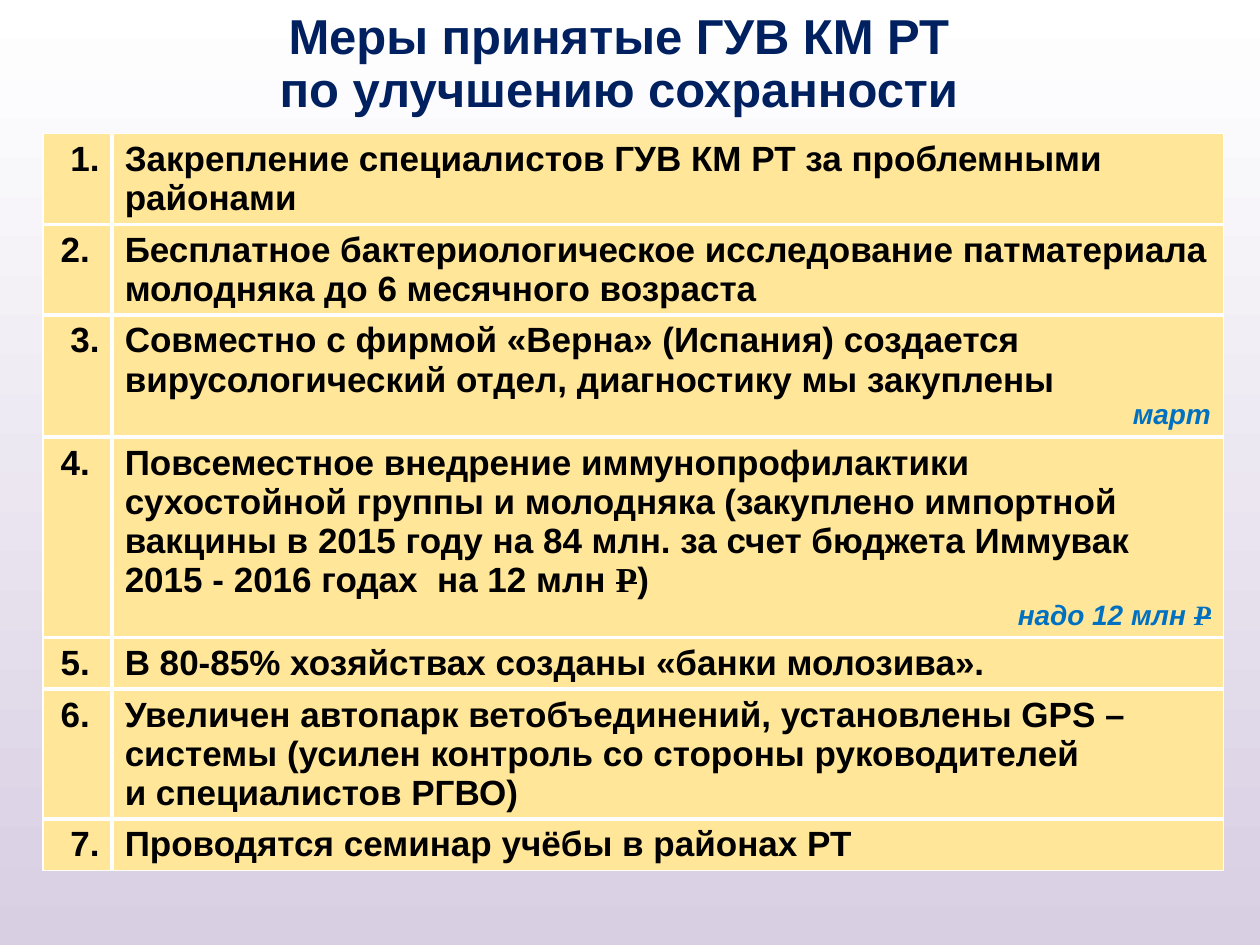
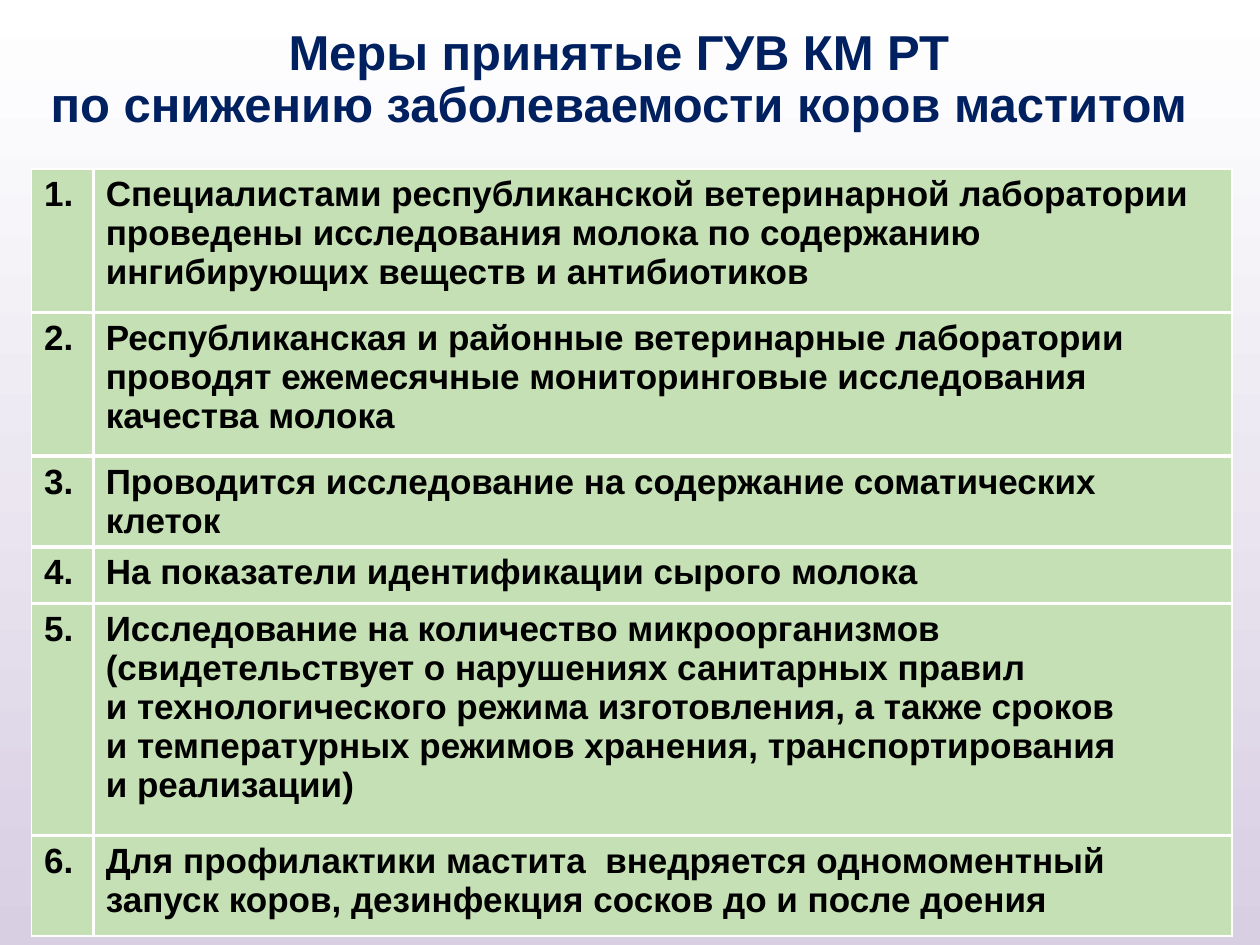
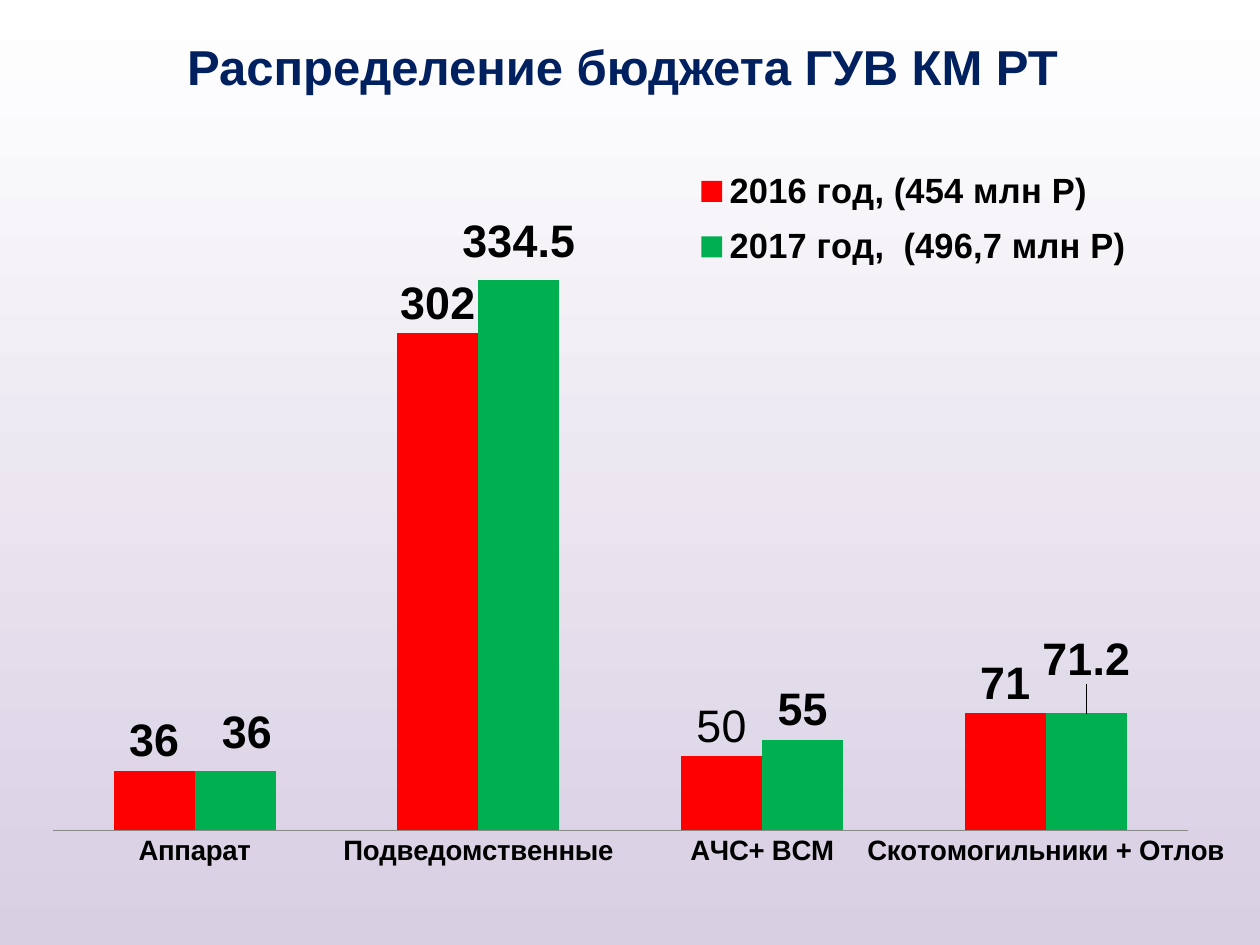
from lxml.etree import SubElement
from pptx import Presentation
from pptx.chart.data import CategoryChartData
from pptx.dml.color import RGBColor
from pptx.enum.chart import XL_CHART_TYPE as ChartType
from pptx.enum.chart import XL_LABEL_POSITION as LabelPosition
from pptx.enum.chart import XL_LEGEND_POSITION as LegendPosition
from pptx.enum.chart import XL_TICK_LABEL_POSITION as TickLabels
from pptx.enum.chart import XL_TICK_MARK as TickMark
from pptx.enum.shapes import MSO_SHAPE as Shape
from pptx.enum.text import MSO_ANCHOR as Anchor
from pptx.enum.text import MSO_AUTO_SIZE as AutoSize
from pptx.enum.text import PP_ALIGN as Align
from pptx.oxml import parse_xml
from pptx.oxml.ns import nsdecls, qn
from pptx.util import Inches, Pt

NAVY = RGBColor(0x00, 0x20, 0x60)
BLACK = RGBColor(0x00, 0x00, 0x00)
WHITE = RGBColor(0xFF, 0xFF, 0xFF)
LILAC = RGBColor(0xD8, 0xCF, 0xE3)
SAND = RGBColor(0xFF, 0xE6, 0x99)
SAGE = RGBColor(0xC5, 0xE0, 0xB4)
NOTE_BLUE = RGBColor(0x00, 0x70, 0xC0)
RED = RGBColor(0xFF, 0x00, 0x00)
GREEN = RGBColor(0x00, 0xB0, 0x50)
AXIS_GRAY = RGBColor(0x89, 0x89, 0x89)

FONT = "Arial"
ROUBLE = "Р"
ROUBLE_FONT = "Times New Roman"

SAFETY_ROWS = [
    ("1.", "Закрепление специалистов ГУВ КМ РТ за проблемными районами", "", 0.72),
    ("2. ", "Бесплатное бактериологическое исследование патматериала "
            "молодняка до 6 месячного возраста", "", 0.72),
    ("3.", "Совместно с фирмой «Верна» (Испания) создается "
           "вирусологический отдел, диагностику мы закуплены", "март", 0.97),
    ("4. ", "Повсеместное внедрение иммунопрофилактики \n"
            "сухостойной группы и молодняка (закуплено импортной "
            "вакцины в 2015 году на 84 млн. за счет бюджета Иммувак \n"
            "2015 - 2016 годах  на 12 млн {rouble})", "надо 12 млн {rouble}", 1.59),
    ("5. ", "В 80-85% хозяйствах созданы «банки молозива».", "", 0.41),
    ("6. ", "Увеличен автопарк ветобъединений, установлены GPS – "
            "системы (усилен контроль со стороны руководителей \n"
            "и специалистов РГВО)", "", 1.03),
    ("7.", "Проводятся семинар учёбы в районах РТ", "", 0.41),
]
MASTITIS_ROWS = [
    ("1.", "Специалистами республиканской ветеринарной лаборатории "
           "проведены исследования молока по содержанию "
           "ингибирующих веществ и антибиотиков", "", 1.14),
    ("2.", "Республиканская и районные ветеринарные лаборатории "
           "проводят ежемесячные мониторинговые исследования "
           "качества молока", "", 1.14),
    ("3.", "Проводится исследование на содержание соматических клеток", "", 0.72),
    ("4.", "На показатели идентификации сырого молока", "", 0.45),
    ("5.", "Исследование на количество микроорганизмов "
           "(свидетельствует о нарушениях санитарных правил \n"
           "и технологического режима изготовления, а также сроков \n"
           "и температурных режимов хранения, транспортирования \n"
           "и реализации)", "", 1.84),
    ("6.", "Для профилактики мастита  внедряется одномоментный "
           "запуск коров, дезинфекция сосков до и после доения", "", 0.8),
]
BUDGET_CATEGORIES = ["Аппарат", "Подведомственные", "АЧС+ ВСМ", "Скотомогильники + Отлов"]
BUDGET_SERIES = [
    ("2016 год, (454 млн Р)", [36, 302, 45, 71], RED),
    ("2017 год,  (496,7 млн Р)", [36, 334.5, 55, 71.2], GREEN),
]
LABEL_SHIFTS_2017 = [(0.01, -0.01), (0, -0.01), (0, 0), (0, -0.03)]


def style_font(font, size, color=BLACK, bold=True, italic=False, name=FONT):
    font.name = name
    font.size = Pt(size)
    font.bold = bold
    font.italic = italic
    font.color.rgb = color


def chart_layout(x, y, width=None, height=None, inner=False):
    layout = parse_xml(f"<c:layout {nsdecls('c')}><c:manualLayout/></c:layout>")
    settings = [("layoutTarget", "inner")] if inner else []
    if width is not None:
        settings += [("xMode", "edge"), ("yMode", "edge")]
    settings += [("x", x), ("y", y)]
    if width is not None:
        settings += [("w", width), ("h", height)]
    for tag, value in settings:
        SubElement(layout[0], qn(f"c:{tag}")).set("val", str(value))
    return layout


def replace_layout(parent, layout, position):
    for old_layout in parent.findall(qn("c:layout")):
        parent.remove(old_layout)
    parent.insert(position, layout)


class Deck:
    def __init__(self):
        self.presentation = Presentation()
        self.presentation.slide_width = Inches(10)
        self.presentation.slide_height = Inches(7.5)
        self.slide = None

    def add_slide(self, title, left, top, width, height):
        layout = self.presentation.slide_layouts[5]
        self.slide = self.presentation.slides.add_slide(layout)
        self.add_backdrop()
        self.add_title(title, left, top, width, height)

    def add_backdrop(self):
        backdrop = self.slide.shapes.add_shape(
            Shape.RECTANGLE, 0, 0,
            self.presentation.slide_width, self.presentation.slide_height)
        backdrop.shadow.inherit = False
        backdrop.line.fill.background()
        backdrop.fill.gradient()
        backdrop.fill.gradient_angle = 90
        for stop, color in zip(backdrop.fill.gradient_stops, (LILAC, WHITE)):
            stop.color.rgb = color
        self.slide.shapes.title.element.addprevious(backdrop.element)

    def add_title(self, text, left, top, width, height):
        title = self.slide.shapes.title
        title.left, title.top = Inches(left), Inches(top)
        title.width, title.height = Inches(width), Inches(height)
        frame = title.text_frame
        frame.auto_size = AutoSize.NONE
        frame.vertical_anchor = Anchor.MIDDLE
        paragraph = frame.paragraphs[0]
        paragraph.alignment = Align.CENTER
        paragraph.line_spacing = 0.9
        self.add_text(paragraph, text, 28, NAVY)

    def add_text(self, paragraph, text, size, color=BLACK, italic=False):
        for line_index, line in enumerate(text.split("\n")):
            if line_index:
                paragraph.add_line_break()
            for part_index, part in enumerate(line.split("{rouble}")):
                if part_index:
                    sign = paragraph.add_run()
                    sign.text = ROUBLE
                    style_font(sign.font, size, color, italic=italic, name=ROUBLE_FONT)
                    sign.font._element.set("strike", "sngStrike")
                if part:
                    run = paragraph.add_run()
                    run.text = part
                    style_font(run.font, size, color, italic=italic)

    def add_measures(self, rows, left, top, widths, fill, number_alignment):
        heights = [row[3] for row in rows]
        table = self.slide.shapes.add_table(
            len(rows), 2, Inches(left), Inches(top),
            Inches(sum(widths)), Inches(sum(heights))).table
        table.first_row = False
        table.horz_banding = False
        for column, width in zip(table.columns, widths):
            column.width = Inches(width)
        for index, (number, text, note, height) in enumerate(rows):
            table.rows[index].height = Inches(height)
            number_cell, text_cell = table.rows[index].cells
            sides = ["T"] * (index > 0) + ["B"] * (index < len(rows) - 1)
            self.format_cell(number_cell, fill, ["R"] + sides)
            self.format_cell(text_cell, fill, ["L"] + sides)
            paragraph = number_cell.text_frame.paragraphs[0]
            paragraph.alignment = number_alignment
            self.add_text(paragraph, number, 20)
            self.add_text(text_cell.text_frame.paragraphs[0], text, 20)
            if note:
                paragraph = text_cell.text_frame.add_paragraph()
                paragraph.alignment = Align.RIGHT
                self.add_text(paragraph, note, 16, NOTE_BLUE, italic=True)

    def format_cell(self, cell, fill, sides):
        properties = cell._tc.get_or_add_tcPr()
        for side in sides:
            properties.append(parse_xml(
                f'<a:ln{side} {nsdecls("a")} w="{Pt(2.25)}"><a:solidFill>'
                f'<a:srgbClr val="{WHITE}"/></a:solidFill></a:ln{side}>'))
        cell.fill.solid()
        cell.fill.fore_color.rgb = fill

    def add_budget_chart(self, left, top, width, height):
        data = CategoryChartData()
        data.categories = BUDGET_CATEGORIES
        for name, values, color in BUDGET_SERIES:
            data.add_series(name, values)
        chart = self.slide.shapes.add_chart(
            ChartType.COLUMN_CLUSTERED, Inches(left), Inches(top),
            Inches(width), Inches(height), data).chart
        style_font(chart.font, 10, bold=False, name="Calibri")
        chart.has_title = False
        self.format_axes(chart)
        self.format_legend(chart)
        plot = chart.plots[0]
        plot.gap_width = 150
        plot.overlap = 0
        plot.vary_by_categories = False
        for series, (name, values, color) in zip(plot.series, BUDGET_SERIES):
            series.format.fill.solid()
            series.format.fill.fore_color.rgb = color
            labels = series.data_labels
            labels.show_value = True
            labels.position = LabelPosition.OUTSIDE_END
            style_font(labels.font, 26)
        series_2016, series_2017 = plot.series
        label = series_2016.points[2].data_label
        label.position = LabelPosition.OUTSIDE_END
        run = label.text_frame.paragraphs[0].add_run()
        run.text = "50"
        style_font(run.font, 26, bold=False)
        for index, shift in enumerate(LABEL_SHIFTS_2017):
            label = series_2017.points[index].data_label
            style_font(label.font, 26)
            label.position = LabelPosition.OUTSIDE_END
            element = series_2017.data_labels._element.findall(qn("c:dLbl"))[index]
            replace_layout(element, chart_layout(*shift), 1)

    def format_axes(self, chart):
        value_axis = chart.value_axis
        value_axis.minimum_scale = 0
        value_axis.maximum_scale = 400
        value_axis.has_major_gridlines = False
        value_axis.visible = False
        category_axis = chart.category_axis
        category_axis.major_tick_mark = TickMark.NONE
        category_axis.tick_label_position = TickLabels.NEXT_TO_AXIS
        category_axis.format.line.color.rgb = AXIS_GRAY
        style_font(category_axis.tick_labels.font, 16)
        plot_area = chart._chartSpace.chart.plotArea
        replace_layout(plot_area, chart_layout(0.015, 0.071, 0.969, 0.829, inner=True), 0)

    def format_legend(self, chart):
        chart.has_legend = True
        legend = chart.legend
        legend.position = LegendPosition.TOP
        legend.include_in_layout = False
        style_font(legend.font, 20)
        replace_layout(legend._element, chart_layout(0.56, 0.05, 0.38, 0.16), 1)


def main():
    deck = Deck()
    deck.add_slide("Меры принятые ГУВ КМ РТ \nпо улучшению сохранности ",
                   0.12, 0.05, 9.69, 0.94)
    deck.add_measures(SAFETY_ROWS, 0.34, 1.06, (0.55, 8.82), SAND, Align.RIGHT)
    deck.add_slide("Меры принятые ГУВ КМ РТ \nпо снижению заболеваемости коров маститом ",
                   0.12, 0.13, 9.69, 1.02)
    deck.add_measures(MASTITIS_ROWS, 0.25, 1.34, (0.49, 9.04), SAGE, Align.LEFT)
    deck.add_slide("Распределение бюджета ГУВ КМ РТ", 0, 0.19, 9.88, 0.72)
    deck.add_budget_chart(0.28, 0.92, 9.45, 6.3)
    deck.presentation.save("out.pptx")


if __name__ == "__main__":
    main()
